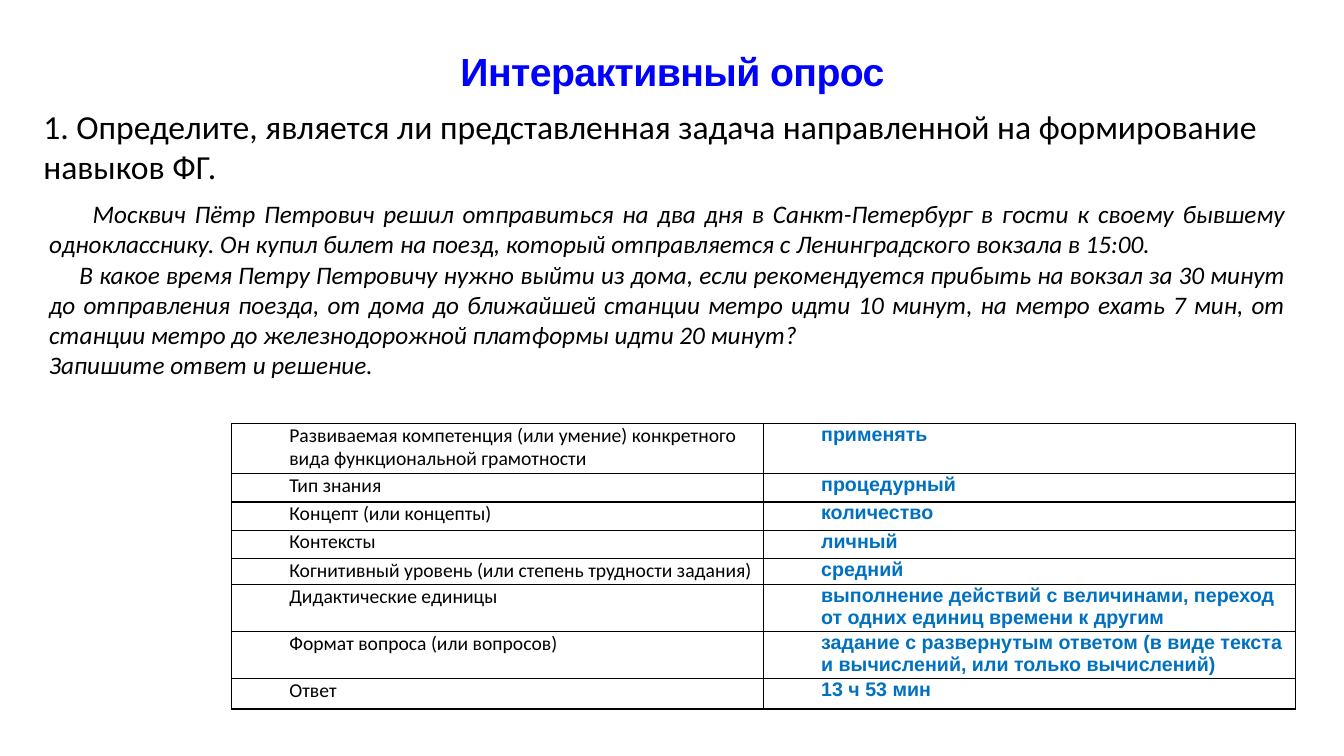
from dataclasses import dataclass, field

from lxml.etree import SubElement
from pptx import Presentation
from pptx.dml.color import RGBColor
from pptx.enum.text import MSO_ANCHOR, PP_ALIGN
from pptx.oxml.ns import qn
from pptx.slide import Slide
from pptx.table import _Cell
from pptx.text.text import _Paragraph
from pptx.util import Inches, Pt

BLACK, BLUE, ANSWER_BLUE = "000000", "0000FF", "0070C0"
TITLE = {"name": "Arial", "size": Pt(28), "bold": True, "color": BLUE}
QUESTION = {"name": "Calibri", "size": Pt(24), "color": BLACK}
TASK = {"name": "Calibri", "size": Pt(18), "italic": True, "color": BLACK}
CRITERION = {"name": "Calibri", "size": Pt(14), "bold": False, "color": BLACK}
ANSWER = {"name": "Arial", "size": Pt(14), "bold": True, "color": ANSWER_BLUE}


@dataclass
class Passage:
    text: str
    align: PP_ALIGN = PP_ALIGN.LEFT
    first_line: float = 0
    tracking: float = 0


@dataclass
class TextBlock:
    left: float
    top: float
    width: float
    height: float
    style: dict
    passages: list[Passage]
    anchor: MSO_ANCHOR = MSO_ANCHOR.TOP
    insets: tuple[float, float] = field(default=(0.11, 0.06))


@dataclass
class Feature:
    criterion: str
    answer: str
    height: float


BLOCKS = [
    TextBlock(0.67, 0.3, 12, 0.81, TITLE,
              [Passage("Интерактивный опрос", PP_ALIGN.CENTER, tracking=-0.4)],
              MSO_ANCHOR.MIDDLE),
    TextBlock(0.32, 0.99, 12.28, 0.93, QUESTION, [Passage(
        "1. Определите, является ли представленная задача направленной на "
        "формирование навыков ФГ.")]),
    TextBlock(0.39, 1.92, 12.46, 1.92, TASK, [
        Passage("Москвич Пётр Петрович решил отправиться на два дня в "
                "Санкт-Петербург в гости к своему бывшему однокласснику. Он купил "
                "билет на поезд, который отправляется с Ленинградского вокзала "
                "в 15:00.", PP_ALIGN.JUSTIFY, 0.43),
        Passage("В какое время Петру Петровичу нужно выйти из дома, если "
                "рекомендуется прибыть на вокзал за 30 минут до отправления поезда, "
                "от дома до ближайшей станции метро идти 10 минут, на метро ехать "
                "7 мин, от станции метро до железнодорожной платформы идти "
                "20 минут?", PP_ALIGN.JUSTIFY, 0.3),
        Passage("Запишите ответ и решение."),
    ], insets=(0.1, 0.05)),
]

FEATURES = [
    Feature("Развиваемая компетенция (или умение) конкретного вида "
            "функциональной грамотности", "применять", 0.5),
    Feature("Тип знания", "процедурный", 0.28),
    Feature("Концепт (или концепты)", "количество", 0.28),
    Feature("Контексты", "личный", 0.28),
    Feature("Когнитивный уровень (или степень трудности задания)", "средний", 0.26),
    Feature("Дидактические единицы",
            "выполнение действий с величинами, переход от одних единиц времени "
            "к другим", 0.46),
    Feature("Формат вопроса (или вопросов)",
            "задание с развернутым ответом (в виде текста и вычислений, или "
            "только вычислений)", 0.46),
    Feature("Ответ", "13 ч 53 мин", 0.3),
]


def rgb(code: str) -> RGBColor:
    return RGBColor.from_string(code)


def write(paragraph: _Paragraph, passage: Passage, style: dict) -> None:
    run = paragraph.add_run()
    run.text = passage.text
    for attribute, value in style.items():
        if attribute == "color":
            run.font.color.rgb = rgb(value)
        else:
            setattr(run.font, attribute, value)
    paragraph.alignment = passage.align
    if passage.first_line:
        paragraph._p.get_or_add_pPr().set("indent", str(Inches(passage.first_line)))
    if passage.tracking:
        run._r.get_or_add_rPr().set("spc", str(round(passage.tracking * 100)))


def add_text_block(slide: Slide, block: TextBlock) -> None:
    box = slide.shapes.add_textbox(Inches(block.left), Inches(block.top),
                                   Inches(block.width), Inches(block.height))
    side, edge = map(Inches, block.insets)
    frame_format = {"word_wrap": True, "vertical_anchor": block.anchor,
                    "margin_left": side, "margin_right": side,
                    "margin_top": edge, "margin_bottom": edge}
    for attribute, value in frame_format.items():
        setattr(box.text_frame, attribute, value)
    for index, passage in enumerate(block.passages):
        paragraph = (box.text_frame.add_paragraph() if index
                     else box.text_frame.paragraphs[0])
        write(paragraph, passage, block.style)


def add_borders(cell: _Cell) -> None:
    properties = cell._tc.get_or_add_tcPr()
    for side in ("lnL", "lnR", "lnT", "lnB"):
        border = SubElement(properties, qn(f"a:{side}"), w=str(Pt(1)))
        fill = SubElement(border, qn("a:solidFill"))
        SubElement(fill, qn("a:srgbClr"), val=BLACK)


def fill_cell(cell: _Cell, text: str, style: dict) -> None:
    cell_format = {"margin_left": Inches(0.07), "margin_right": Inches(0.07),
                   "margin_top": 0, "margin_bottom": 0}
    for attribute, value in cell_format.items():
        setattr(cell, attribute, value)
    add_borders(cell)
    cell.fill.background()
    paragraph = cell.text_frame.paragraphs[0]
    write(paragraph, Passage(text), style)
    indents = {"marL": Inches(0.5), "indent": 0}
    for attribute, value in indents.items():
        paragraph._p.get_or_add_pPr().set(attribute, str(value))


def add_feature_table(slide: Slide, features: list[Feature]) -> None:
    height = sum(feature.height for feature in features)
    table = slide.shapes.add_table(len(features), 2, Inches(2.3), Inches(4.2),
                                   Inches(10.55), Inches(height)).table
    table.first_row = table.horz_banding = False
    for row, feature in zip(table.rows, features):
        row.height = Inches(feature.height)
        fill_cell(row.cells[0], feature.criterion, CRITERION)
        fill_cell(row.cells[1], feature.answer, ANSWER)


def main() -> None:
    presentation = Presentation()
    presentation.slide_width = Inches(13.33)
    presentation.slide_height = Inches(7.5)
    slide = presentation.slides.add_slide(presentation.slide_layouts[6])
    for block in BLOCKS:
        add_text_block(slide, block)
    add_feature_table(slide, FEATURES)
    presentation.save("out.pptx")


if __name__ == "__main__":
    main()
